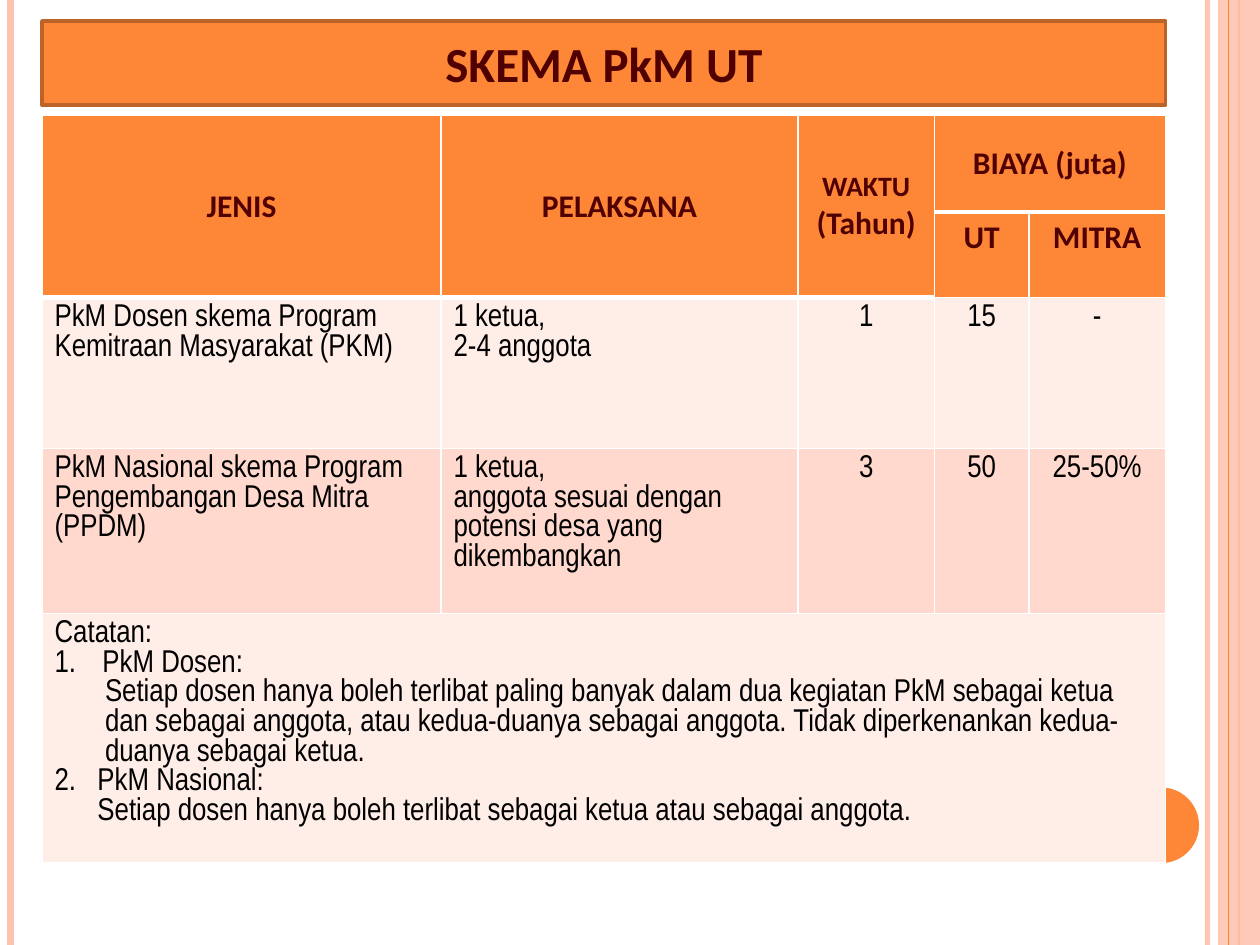
from dataclasses import dataclass

from lxml.etree import SubElement
from pptx import Presentation
from pptx.dml.color import RGBColor
from pptx.enum.shapes import MSO_CONNECTOR, MSO_SHAPE
from pptx.enum.text import MSO_ANCHOR, PP_ALIGN
from pptx.oxml.ns import qn
from pptx.util import Inches, Pt


@dataclass(frozen=True)
class Theme:
    orange: str = "FE8637"
    dark_orange: str = "BC6329"
    peach: str = "FEC3AE"
    light_row: str = "FFEDE8"
    deep_row: str = "FFD9CE"
    white: str = "FFFFFF"
    maroon: str = "500000"
    black: str = "000000"
    heading_font: str = "Calibri"
    body_font: str = "Arial Narrow"
    title_size: int = 28
    text_size: int = 18
    small_size: int = 16


THEME = Theme()
COLUMNS, ROWS = 120, 90  # grid of 1/12 inch
LEFT, WIDTH = 4, 107
COLUMN_WIDTHS = (38, 34, 13, 9, 13)
ROW_HEIGHTS = (9.2, 8, 14.4, 15.7, 23.7)

SCHEMES = (
    (THEME.light_row,
     (["PkM Dosen skema Program Kemitraan Masyarakat (PKM)"],
      ["1 ketua,", "2-4 anggota"], ["1"], ["15"], ["-"])),
    (THEME.deep_row,
     (["PkM Nasional skema Program Pengembangan Desa Mitra (PPDM)"],
      ["1 ketua,", "anggota sesuai dengan potensi desa yang dikembangkan"],
      ["3"], ["50"], ["25-50%"])),
)
# Text, left indent in inches, list number
NOTES = (
    ("Catatan:", 0, None),
    ("PkM Dosen:", 0.38, 1),
    ("Setiap dosen hanya boleh terlibat paling banyak dalam dua kegiatan PkM "
     "sebagai ketua dan sebagai anggota, atau kedua-duanya sebagai anggota. "
     "Tidak diperkenankan kedua-duanya sebagai ketua.", 0.4, None),
    ("PkM Nasional:", 0.34, 2),
    ("Setiap dosen hanya boleh terlibat sebagai ketua atau sebagai anggota.",
     0.34, None),
)


def grid(units):
    return Inches(units / 12)


def rgb(color):
    return RGBColor.from_string(color)


def set_opacity(properties, percent):
    color = next(properties.iter(qn("a:srgbClr")))
    SubElement(color, qn("a:alpha"), val=str(percent * 1000))


def add_run(paragraph, text, size=THEME.text_size, heading=False):
    run = paragraph.add_run()
    run.text = text
    run.font.size = Pt(size)
    run.font.bold = heading
    run.font.name = THEME.heading_font if heading else THEME.body_font
    run.font.color.rgb = rgb(THEME.maroon if heading else THEME.black)


def add_paragraph(frame, index, align=PP_ALIGN.LEFT):
    paragraph = frame.add_paragraph() if index else frame.paragraphs[0]
    paragraph.alignment = align
    return paragraph


def indent(paragraph, left, number):
    """Indent a note and, where it has a number, hang the number."""
    properties = paragraph._p.get_or_add_pPr()
    properties.set("marL", str(Inches(left)))
    properties.set("indent", str(-Inches(left) if number else 0))
    if number:
        SubElement(properties, qn("a:buAutoNum"), type="arabicPeriod",
                   startAt=str(number))


def add_stripe(slide, column, color, width, opacity=100):
    stripe = slide.shapes.add_connector(
        MSO_CONNECTOR.STRAIGHT, grid(column), 0, grid(column), grid(ROWS))
    stripe.line.color.rgb = rgb(color)
    stripe.line.width = Pt(width)
    properties = stripe._element.spPr
    if opacity < 100:
        set_opacity(properties, opacity)
    SubElement(properties, qn("a:effectLst"))


def add_block(slide, preset, left, top, width, height, color):
    block = slide.shapes.add_shape(preset, *map(grid, (left, top, width, height)))
    block.shadow.inherit = False
    block.fill.solid()
    block.fill.fore_color.rgb = rgb(color)
    block.line.fill.background()
    return block


def add_decoration(slide):
    add_stripe(slide, 115, THEME.peach, 3, 93)
    add_stripe(slide, 1, THEME.peach, 4.5)
    add_stripe(slide, 118, THEME.orange, 1.5)
    band = add_block(slide, MSO_SHAPE.RECTANGLE, 116, 0, COLUMNS - 116, ROWS,
                     THEME.peach)
    set_opacity(band._element.spPr, 87)
    add_stripe(slide, 117, THEME.orange, 0.75)
    add_block(slide, MSO_SHAPE.OVAL, 107, 75, 7.2, 7.2, THEME.orange)


def add_title(slide):
    title = add_block(slide, MSO_SHAPE.RECTANGLE, LEFT, 2, WIDTH, 8, THEME.orange)
    title.line.color.rgb = rgb(THEME.dark_orange)
    title.line.width = Pt(2)
    title.text_frame.vertical_anchor = MSO_ANCHOR.MIDDLE
    paragraph = add_paragraph(title.text_frame, 0, PP_ALIGN.CENTER)
    add_run(paragraph, "SKEMA PkM UT", THEME.title_size, heading=True)


def style_cell(cell, color, **borders):
    """Fill a cell and draw white borders, given as side=points."""
    properties = cell._tc.get_or_add_tcPr()
    for side in "LRTB":
        if side in borders:
            line = SubElement(properties, qn(f"a:ln{side}"),
                              w=str(Pt(borders[side])))
            fill = SubElement(line, qn("a:solidFill"))
            SubElement(fill, qn("a:srgbClr"), val=THEME.white)
    cell.fill.solid()
    cell.fill.fore_color.rgb = rgb(color)


def fill_header(table):
    for row in range(2):
        for column in range(len(COLUMN_WIDTHS)):
            bottom = {} if row == 1 and column > 2 else {"B": 3}
            style_cell(table.cell(row, column), THEME.orange, L=1, R=1, **bottom)
    for column in range(3):
        table.cell(0, column).merge(table.cell(1, column))
    table.cell(0, 3).merge(table.cell(0, 4))

    size = THEME.text_size
    headings = {
        (0, 0): [("JENIS", size)],
        (0, 1): [("PELAKSANA", size)],
        (0, 2): [("WAKTU ", THEME.small_size), ("(Tahun)", size)],
        (0, 3): [("BIAYA (juta)", size)],
        (1, 3): [("UT", size)],
        (1, 4): [("MITRA", size)],
    }
    for (row, column), runs in headings.items():
        cell = table.cell(row, column)
        cell.vertical_anchor = MSO_ANCHOR.TOP if row else MSO_ANCHOR.MIDDLE
        paragraph = add_paragraph(cell.text_frame, 0, PP_ALIGN.CENTER)
        for text, run_size in runs:
            add_run(paragraph, text, run_size, heading=True)


def fill_schemes(table):
    for row, (color, entries) in enumerate(SCHEMES, start=2):
        for column, lines in enumerate(entries):
            cell = table.cell(row, column)
            style_cell(cell, color, L=1, R=1, B=1)
            align = PP_ALIGN.LEFT if column < 2 else PP_ALIGN.CENTER
            for index, text in enumerate(lines):
                add_run(add_paragraph(cell.text_frame, index, align), text)


def fill_notes(table):
    last = len(ROW_HEIGHTS) - 1
    notes = table.cell(last, 0)
    notes.merge(table.cell(last, len(COLUMN_WIDTHS) - 1))
    style_cell(notes, THEME.light_row, L=1, R=1, B=1)
    for index, (text, left, number) in enumerate(NOTES):
        paragraph = add_paragraph(notes.text_frame, index)
        indent(paragraph, left, number)
        add_run(paragraph, text)


def add_scheme_table(slide):
    table = slide.shapes.add_table(
        len(ROW_HEIGHTS), len(COLUMN_WIDTHS), grid(LEFT), grid(11),
        grid(WIDTH), grid(sum(ROW_HEIGHTS))).table
    table.first_row = table.horz_banding = False
    for column, width in zip(table.columns, COLUMN_WIDTHS):
        column.width = grid(width)
    for row, height in zip(table.rows, ROW_HEIGHTS):
        row.height = grid(height)
    fill_header(table)
    fill_schemes(table)
    fill_notes(table)


def main():
    deck = Presentation()
    deck.slide_width, deck.slide_height = grid(COLUMNS), grid(ROWS)
    slide = deck.slides.add_slide(deck.slide_layouts[6])
    add_decoration(slide)
    add_title(slide)
    add_scheme_table(slide)
    deck.save("out.pptx")


if __name__ == "__main__":
    main()
